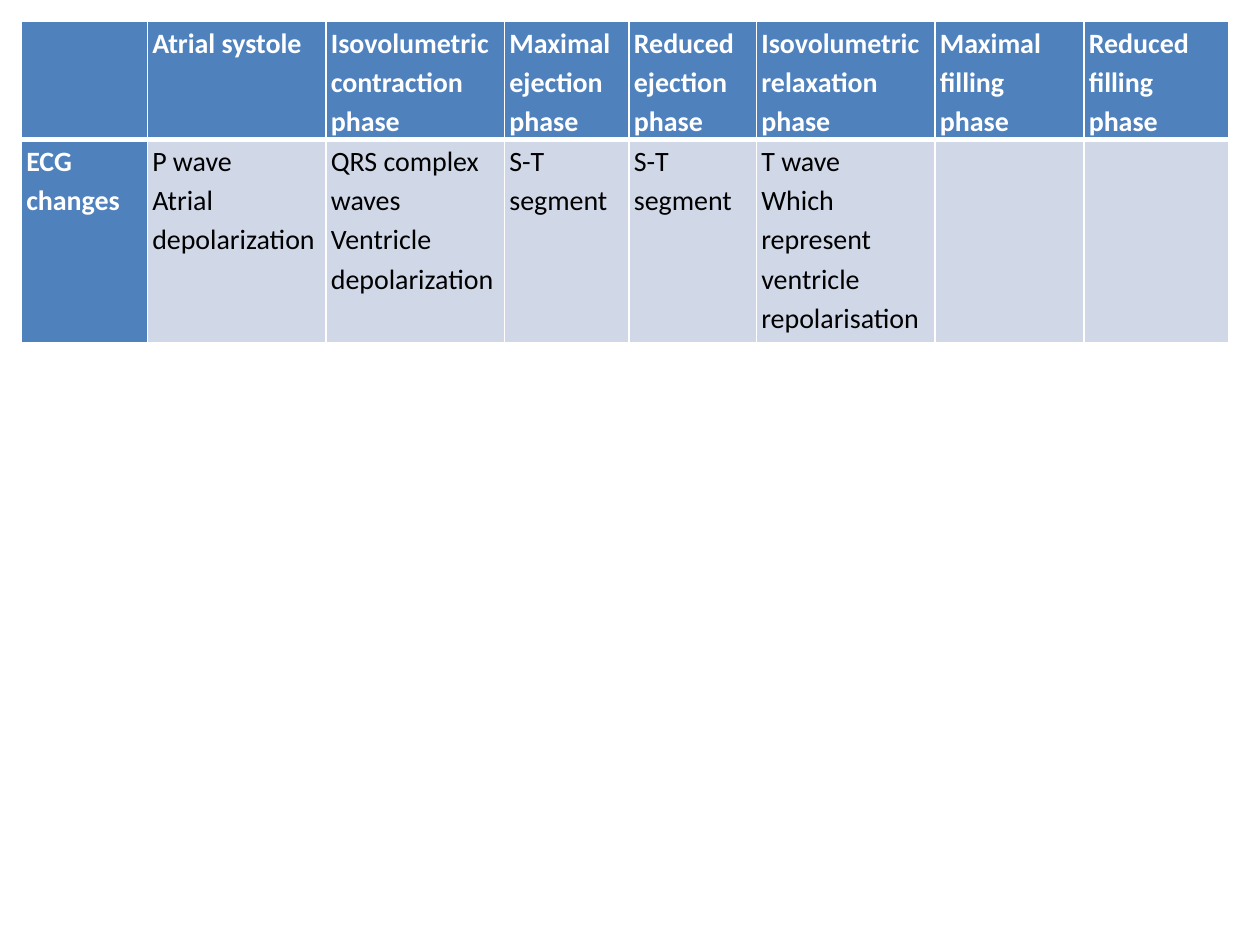
from dataclasses import dataclass

from lxml import etree
from pptx import Presentation
from pptx.dml.color import RGBColor
from pptx.oxml.ns import qn
from pptx.util import Cm, Pt

BLANK_LAYOUT = 6
COLUMN_WIDTHS = (2.54, 3.6, 3.6, 2.51, 2.57, 3.6, 3.0, 2.92)
ROW_HEIGHTS = (2.34, 4.09)
CARDIAC_CYCLE = (
    ("", "Atrial systole", "Isovolumetric contraction phase", "Maximal ejection phase",
     "Reduced ejection phase", "Isovolumetric relaxation phase", "Maximal filling phase",
     "Reduced filling phase"),
    ("ECG changes", "P wave\nAtrial depolarization",
     "QRS complex waves\nVentricle depolarization", "S-T segment", "S-T segment",
     "T wave\nWhich represent ventricle repolarisation", "", ""),
)


@dataclass(frozen=True)
class Theme:
    """Colours, type and line widths of the slide."""
    heading_fill: str = "4F81BD"
    body_fill: str = "D0D8E8"
    heading_text: str = "FFFFFF"
    body_text: str = "000000"
    border: str = "FFFFFF"
    font: str = "Calibri"
    size: int = 16
    line_spacing: float = 1.15
    thin: int = 1
    thick: int = 3


THEME = Theme()


def write_text(frame, text, *, color, bold=False):
    """Write each line of text as a formatted paragraph."""
    for index, line in enumerate(text.split("\n")):
        paragraph = frame.add_paragraph() if index else frame.paragraphs[0]
        paragraph.line_spacing = THEME.line_spacing
        paragraph.font.size = Pt(THEME.size)
        if line:
            run = paragraph.add_run()
            run.text = line
            run.font.name = THEME.font
            run.font.size = Pt(THEME.size)
            run.font.bold = bold
            run.font.color.rgb = RGBColor.from_string(color)


def set_borders(cell, **widths):
    """Draw the cell borders, given in points by side."""
    properties = cell._tc.get_or_add_tcPr()
    for side in "LRTB":
        line = etree.SubElement(properties, qn(f"a:ln{side}"), w=str(Pt(widths[side])))
        fill = etree.SubElement(line, qn("a:solidFill"))
        etree.SubElement(fill, qn("a:srgbClr"), val=THEME.border)


def format_cell(cell, text, *, is_heading, top, bottom):
    """Set the borders, fill, margins and text of one cell."""
    set_borders(cell, L=THEME.thin, R=THEME.thin, T=top, B=bottom)
    cell.fill.solid()
    cell.fill.fore_color.rgb = RGBColor.from_string(
        THEME.heading_fill if is_heading else THEME.body_fill)
    cell.margin_left = cell.margin_right = Cm(0.1)
    cell.margin_top = cell.margin_bottom = Cm(0)
    write_text(cell.text_frame, text, bold=is_heading,
               color=THEME.heading_text if is_heading else THEME.body_text)


def add_phase_table(slide):
    """Add the table of ECG changes by cardiac phase."""
    table = slide.shapes.add_table(
        len(ROW_HEIGHTS), len(COLUMN_WIDTHS), Cm(0.43), Cm(0.43),
        Cm(sum(COLUMN_WIDTHS)), Cm(sum(ROW_HEIGHTS))).table
    table.first_col = True
    table.horz_banding = True
    for column, width in zip(table.columns, COLUMN_WIDTHS):
        column.width = Cm(width)
    for row, height in zip(table.rows, ROW_HEIGHTS):
        row.height = Cm(height)
    for row_index, texts in enumerate(CARDIAC_CYCLE):
        for column_index, text in enumerate(texts):
            format_cell(table.cell(row_index, column_index), text,
                        is_heading=row_index == 0 or column_index == 0,
                        top=THEME.thick if row_index else THEME.thin,
                        bottom=THEME.thin if row_index else THEME.thick)


def main():
    """Build and save the slide."""
    presentation = Presentation()
    presentation.slide_width = Cm(25.4)
    presentation.slide_height = Cm(19.05)
    slide = presentation.slides.add_slide(presentation.slide_layouts[BLANK_LAYOUT])
    add_phase_table(slide)
    presentation.save("out.pptx")


if __name__ == "__main__":
    main()
